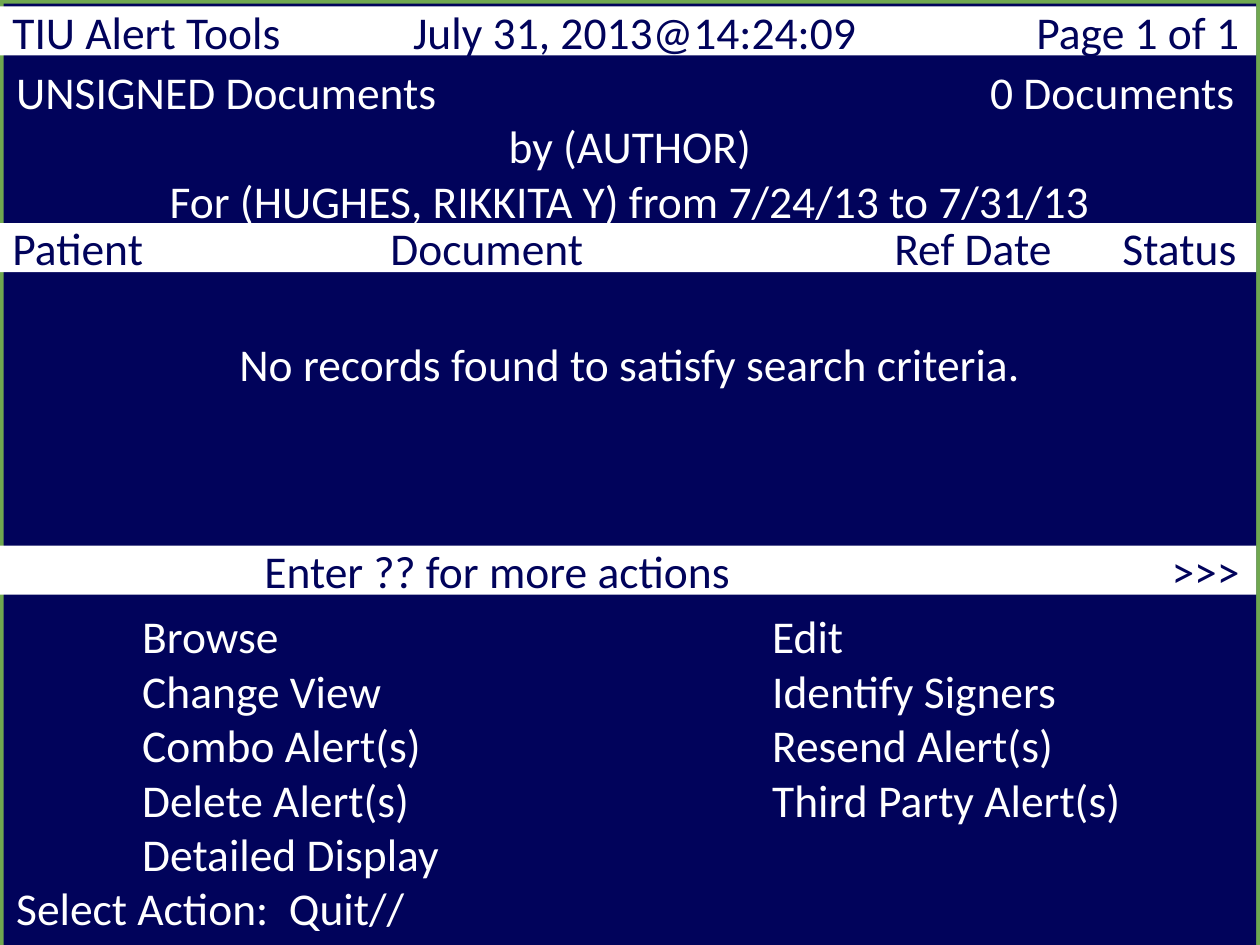
from typing import NamedTuple

from lxml.etree import SubElement
from pptx import Presentation
from pptx.dml.color import RGBColor
from pptx.enum.shapes import MSO_SHAPE
from pptx.enum.text import MSO_ANCHOR, PP_ALIGN
from pptx.oxml.ns import qn
from pptx.util import Inches, Pt

COLORS = {"edge": "70A850", "navy": "01035B", "white": "FFFFFF"}
FONT = "Calibri"
SIZE = 26
LINE_PITCH = 31.1


class Stop(NamedTuple):
    pos: float
    algn: str = "l"


class Line(NamedTuple):
    text: str
    stops: tuple[Stop, ...] = ()
    align: PP_ALIGN = PP_ALIGN.LEFT
    lines_before: int = 0


class Panel(NamedTuple):
    left: float
    top: float
    width: float
    height: float
    fill: str
    color: str
    lines: list[Line]
    anchor: MSO_ANCHOR = MSO_ANCHOR.MIDDLE
    top_inset: float = 0.05
    pitch: float | None = None


def bar(top: float, text: str, *stops: Stop) -> Panel:
    return Panel(0, top, 9.97, 0.39, "white", "navy", [Line(text, stops)])


def write_line(p, line: Line, color: str, pitch: float | None) -> None:
    p.text = line.text
    p.alignment = line.align
    if pitch:
        p.line_spacing = Pt(pitch)
        p.space_before = Pt(pitch * line.lines_before)
    if line.stops:
        tabs = SubElement(p._p.get_or_add_pPr(), qn("a:tabLst"))
        for stop in line.stops:
            SubElement(tabs, qn("a:tab"), pos=str(Inches(stop.pos)), algn=stop.algn)
    for r in p.runs:
        r.font.name = FONT
        r.font.size = Pt(SIZE)
        r.font.color.rgb = RGBColor.from_string(COLORS[color])


def draw_panel(s, panel: Panel) -> None:
    sp = s.shapes.add_shape(
        MSO_SHAPE.RECTANGLE,
        Inches(panel.left), Inches(panel.top),
        Inches(panel.width), Inches(panel.height),
    )
    sp.shadow.inherit = False
    sp.fill.solid()
    sp.fill.fore_color.rgb = RGBColor.from_string(COLORS[panel.fill])
    sp.line.fill.background()
    tf = sp.text_frame
    tf.word_wrap = True
    tf.vertical_anchor = panel.anchor
    tf.margin_top = Inches(panel.top_inset)
    for i, line in enumerate(panel.lines):
        p = tf.paragraphs[0] if i == 0 else tf.add_paragraph()
        write_line(p, line, panel.color, panel.pitch)


ACTION_STOPS = (Stop(1), Stop(6))
ACTIONS = [
    ("Browse", "Edit"),
    ("Change View", "Identify Signers"),
    ("Combo Alert(s)", "Resend Alert(s)"),
    ("Delete Alert(s)", "Third Party Alert(s)"),
    ("Detailed Display",),
]

SCREEN = Panel(
    0.03, 0.03, 9.94, 7.47, "navy", "white",
    [
        Line("UNSIGNED Documents\t0 Documents", (Stop(9.67, "r"),)),
        Line("by (AUTHOR)", align=PP_ALIGN.CENTER),
        Line("For (HUGHES, RIKKITA Y) from 7/24/13 to 7/31/13", align=PP_ALIGN.CENTER),
        Line("No records found to satisfy search criteria.",
             align=PP_ALIGN.CENTER, lines_before=2),
        *[
            Line("\t" + "\t".join(row), ACTION_STOPS, lines_before=0 if i else 4)
            for i, row in enumerate(ACTIONS)
        ],
        Line("Select Action:  Quit//"),
    ],
    anchor=MSO_ANCHOR.TOP, top_inset=0.48, pitch=LINE_PITCH,
)

PANELS = [
    SCREEN,
    bar(4.33, "\tEnter ?? for more actions\t>>>", Stop(2), Stop(9.74, "r")),
    bar(0.05, "TIU Alert Tools\tJuly 31, 2013@14:24:09\tPage 1 of 1",
        Stop(3.18), Stop(9.74, "r")),
    bar(1.77, "Patient\tDocument\tRef Date\tStatus", Stop(3), Stop(7), Stop(8.81)),
]


def main() -> None:
    prs = Presentation()
    prs.slide_width = Inches(10)
    prs.slide_height = Inches(7.5)
    s = prs.slides.add_slide(prs.slide_layouts[6])
    s.background.fill.solid()
    s.background.fill.fore_color.rgb = RGBColor.from_string(COLORS["edge"])
    for panel in PANELS:
        draw_panel(s, panel)
    prs.save("out.pptx")


if __name__ == "__main__":
    main()
